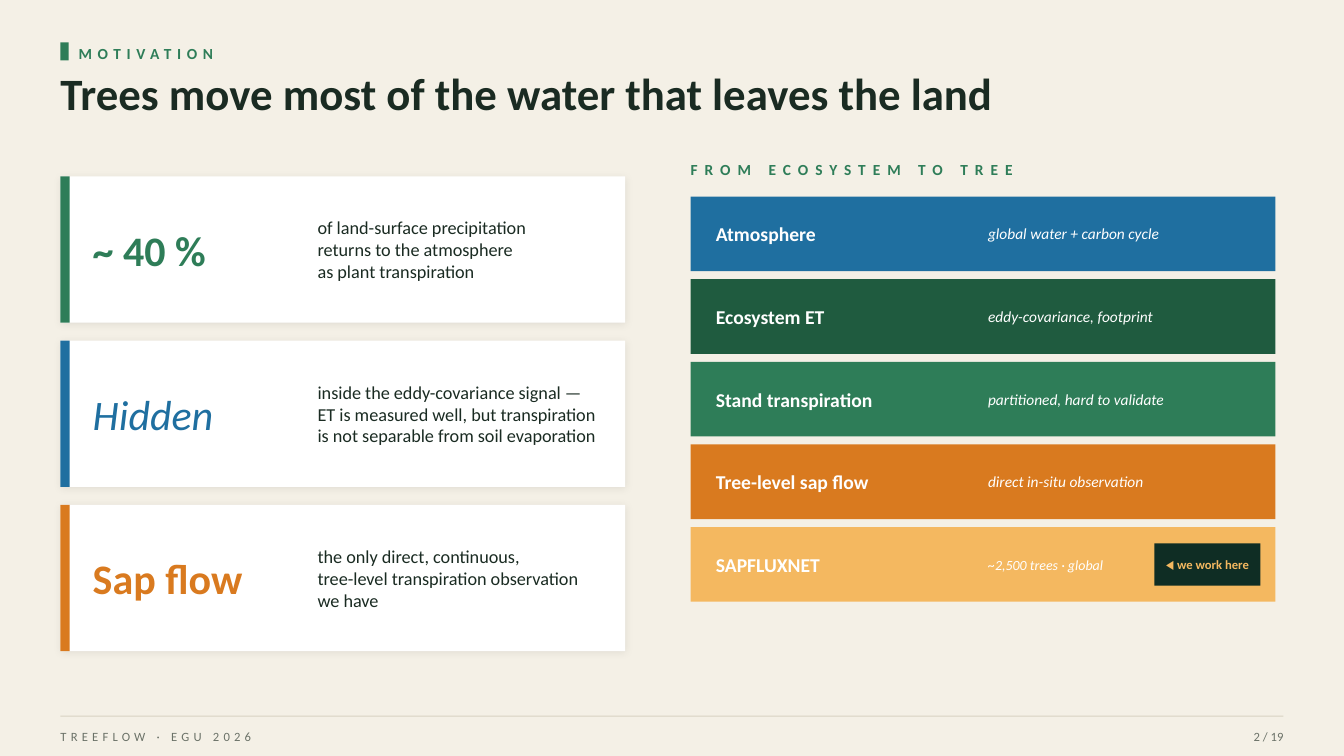
from lxml import etree
from pptx import Presentation
from pptx.dml.color import RGBColor
from pptx.enum.shapes import MSO_SHAPE
from pptx.enum.text import MSO_ANCHOR, MSO_AUTO_SIZE, PP_ALIGN
from pptx.oxml.ns import qn
from pptx.util import Inches, Pt

RECT = MSO_SHAPE.RECTANGLE
TOP, MIDDLE = MSO_ANCHOR.TOP, MSO_ANCHOR.MIDDLE
LEFT, CENTER, RIGHT = PP_ALIGN.LEFT, PP_ALIGN.CENTER, PP_ALIGN.RIGHT
FONT = "Calibri"

CREAM = RGBColor(0xF4, 0xF0, 0xE6)
WHITE = RGBColor(0xFF, 0xFF, 0xFF)
INK = RGBColor(0x1A, 0x2B, 0x22)
GREEN = RGBColor(0x2E, 0x7D, 0x58)
FOREST = RGBColor(0x1F, 0x5B, 0x3F)
BLUE = RGBColor(0x1F, 0x6F, 0xA0)
ORANGE = RGBColor(0xD9, 0x7A, 0x1F)
AMBER = RGBColor(0xF4, 0xB8, 0x60)
DARK = RGBColor(0x0F, 0x2D, 0x24)
RULE = RGBColor(0xD8, 0xD2, 0xC2)
GREY = RGBColor(0x6B, 0x72, 0x68)

TITLE = "Trees move most of the water that leaves the land"
# Headline, headline style, accent colour, explanation
CARDS = [
    ("~ 40 %", {"bold": True}, GREEN,
     "of land-surface precipitation\nreturns to the atmosphere\nas plant transpiration"),
    ("Hidden", {"italic": True}, BLUE,
     "inside the eddy-covariance signal —\nET is measured well, but transpiration\n"
     "is not separable from soil evaporation"),
    ("Sap flow", {"bold": True}, ORANGE,
     "the only direct, continuous,\ntree-level transpiration observation\nwe have"),
]
# Level, note, note width, note size, fill
LEVELS = [
    ("Atmosphere", "global water + carbon cycle", 2.5, 11, BLUE),
    ("Ecosystem ET", "eddy-covariance, footprint", 2.5, 11, FOREST),
    ("Stand transpiration", "partitioned, hard to validate", 2.5, 11, GREEN),
    ("Tree-level sap flow", "direct in-situ observation", 2.5, 11, ORANGE),
    ("SAPFLUXNET", "~2,500 trees · global", 1.55, 10, AMBER),
]

MARGIN = 0.6
CARD_TOP, CARD_W, CARD_H, CARD_STEP = 1.75, 5.6, 1.45, 1.63
CARD_PAD = 0.18
LEVEL_X, LEVEL_TOP, LEVEL_W, LEVEL_H, LEVEL_STEP = 6.85, 1.95, 5.8, 0.74, 0.82
BADGE_W, BADGE_H = 1.05, 0.42


def write(sp, text, size, color, bold=False, italic=False, spacing=0,
          align=LEFT, anchor=MIDDLE):
    """Fill a shape's frame with text in one style; spacing is in points."""
    tf = sp.text_frame
    tf.auto_size = MSO_AUTO_SIZE.NONE
    tf.word_wrap = True
    tf.vertical_anchor = anchor
    tf.margin_left = tf.margin_right = tf.margin_top = tf.margin_bottom = 0
    tf.text = text
    for p in tf.paragraphs:
        p.alignment = align
        for r in p.runs:
            r.font.name, r.font.size = FONT, Pt(size)
            r.font.bold, r.font.italic = bold, italic
            r.font.color.rgb = color
            if spacing:
                r.font._element.set("spc", str(spacing * 100))


def add_text(s, x, y, w, h, text, size, color, **style):
    sp = s.shapes.add_textbox(Inches(x), Inches(y), Inches(w), Inches(h))
    write(sp, text, size, color, **style)


def add_rect(s, x, y, w, h, color):
    sp = s.shapes.add_shape(RECT, Inches(x), Inches(y), Inches(w), Inches(h))
    sp.shadow.inherit = False
    sp.fill.solid()
    sp.fill.fore_color.rgb = color
    sp.line.fill.background()
    return sp


def add_soft_shadow(sp):
    effects = sp._element.spPr.find(qn("a:effectLst"))
    shadow = etree.SubElement(effects, qn("a:outerShdw"), blurRad=str(Pt(6)),
                              dist=str(Pt(1)), dir=str(90 * 60000),
                              algn="bl", rotWithShape="0")
    color = etree.SubElement(shadow, qn("a:srgbClr"), val="000000")
    etree.SubElement(color, qn("a:alpha"), val="8000")


def add_header(s):
    add_rect(s, MARGIN, 0.42, 0.08, 0.18, GREEN)
    add_text(s, 0.78, 0.4, 6, 0.25, "MOTIVATION", 11, GREEN, bold=True, spacing=4)
    title = s.shapes.title
    title.left, title.top = Inches(MARGIN), Inches(0.65)
    title.width, title.height = Inches(12), Inches(0.85)
    write(title, TITLE, 32, INK, bold=True, anchor=TOP)


def add_cards(s):
    text_h = CARD_H - 2 * CARD_PAD
    for i, (headline, style, color, explanation) in enumerate(CARDS):
        y = CARD_TOP + i * CARD_STEP
        add_soft_shadow(add_rect(s, MARGIN, y, CARD_W, CARD_H, WHITE))
        add_rect(s, MARGIN, y, 0.09, CARD_H, color)
        add_text(s, 0.92, y + CARD_PAD, 2.2, text_h, headline, 30, color, **style)
        add_text(s, 3.15, y + CARD_PAD, 2.9, text_h, explanation, 13, INK)


def add_levels(s):
    add_text(s, LEVEL_X, 1.55, LEVEL_W, 0.25, "FROM ECOSYSTEM TO TREE", 11, GREEN,
             bold=True, spacing=5)
    for i, (level, note, note_w, note_size, color) in enumerate(LEVELS):
        y = LEVEL_TOP + i * LEVEL_STEP
        add_rect(s, LEVEL_X, y, LEVEL_W, LEVEL_H, color)
        add_text(s, LEVEL_X + 0.25, y, 2.6, LEVEL_H, level, 14, WHITE, bold=True)
        add_text(s, 9.8, y, note_w, LEVEL_H, note, note_size, WHITE, italic=True)
    badge = add_rect(s, LEVEL_X + LEVEL_W - 0.15 - BADGE_W,
                     y + (LEVEL_H - BADGE_H) / 2, BADGE_W, BADGE_H, DARK)
    write(badge, "◀ we work here", 9, AMBER, bold=True, align=CENTER)


def add_footer(s):
    add_rect(s, MARGIN, 7.1, 12.13, 0.01, RULE)
    add_text(s, MARGIN, 7.18, 6, 0.25, "TREEFLOW · EGU 2026", 9, GREY, spacing=3)
    add_text(s, 11.13, 7.18, 1.6, 0.25, "2 / 19", 9, GREY, align=RIGHT)


def main():
    prs = Presentation()
    prs.slide_width, prs.slide_height = Inches(13.33), Inches(7.5)
    s = prs.slides.add_slide(prs.slide_layouts[5])
    s.background.fill.solid()
    s.background.fill.fore_color.rgb = CREAM
    add_header(s)
    add_cards(s)
    add_levels(s)
    add_footer(s)
    prs.save("out.pptx")


if __name__ == "__main__":
    main()
